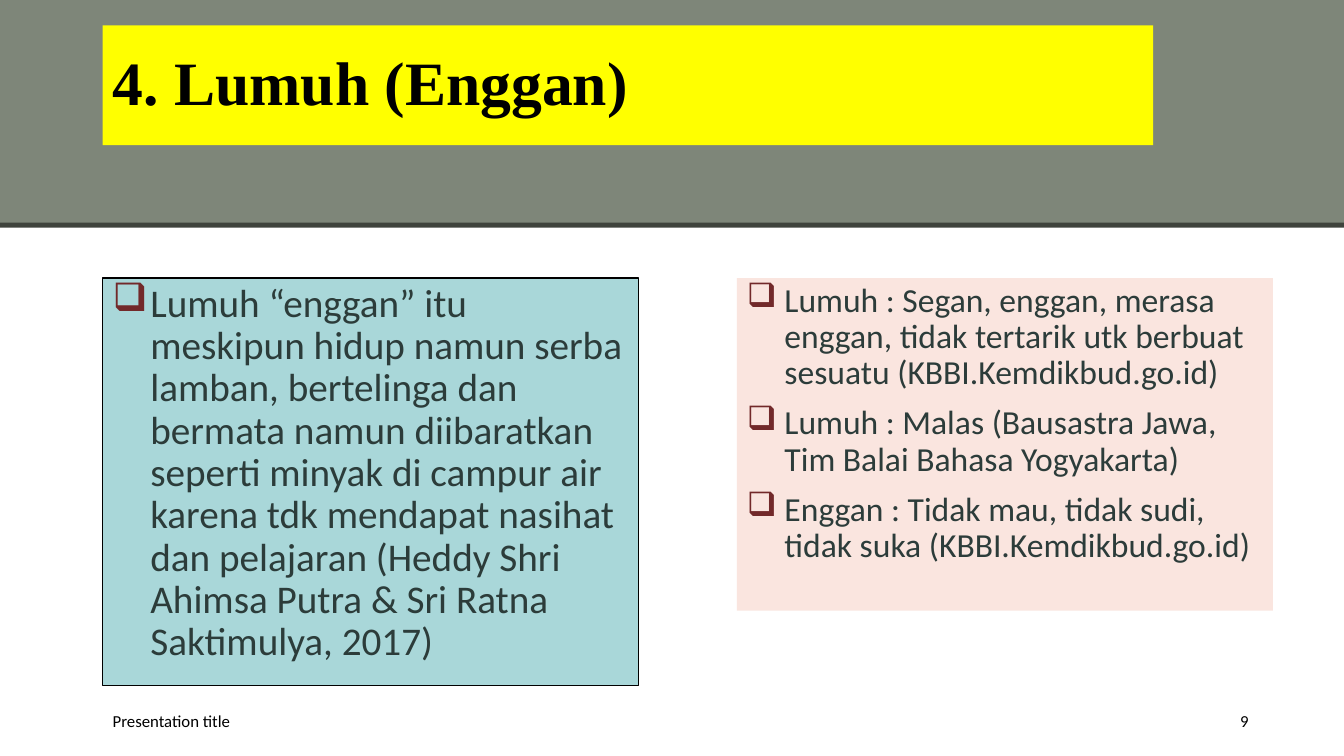
from lxml.etree import SubElement
from pptx import Presentation
from pptx.dml.color import RGBColor
from pptx.enum.shapes import MSO_SHAPE
from pptx.enum.text import MSO_ANCHOR, PP_ALIGN
from pptx.oxml.ns import qn
from pptx.util import Cm, Pt

# Content
TITLE = "4. Lumuh (Enggan)"
LEFT_POINTS = [
    "Lumuh “enggan” itu meskipun hidup namun serba lamban, bertelinga dan "
    "bermata namun diibaratkan seperti minyak di campur air karena tdk mendapat "
    "nasihat dan pelajaran (Heddy Shri Ahimsa Putra & Sri Ratna Saktimulya, 2017)",
]
RIGHT_POINTS = [
    "Lumuh : Segan, enggan, merasa enggan, tidak tertarik utk berbuat sesuatu "
    "(KBBI.Kemdikbud.go.id)",
    "Lumuh : Malas (Bausastra Jawa, Tim Balai Bahasa Yogyakarta)",
    "Enggan : Tidak mau, tidak sudi, tidak suka (KBBI.Kemdikbud.go.id)",
]
FOOTER = "Presentation title"
PAGE_NUMBER = "9"

# Layout in centimetres
SLIDE_WIDTH, SLIDE_HEIGHT = 33.87, 19.05
MARGIN = 2.59
PANEL_TOP, PANEL_WIDTH, PANEL_GAP = 7.01, 13.51, 2.47
RIGHT_PANEL = MARGIN + PANEL_WIDTH + PANEL_GAP
FOOTER_TOP, FOOTER_HEIGHT = 17.65, 1.02
INDENT = 0.95
INK, BULLET_COLOR = "2C3C3A", "72292A"


def color(value):
    return RGBColor.from_string(value)


def add_box(slide, left, top, width, height, fill, line=None):
    shape = slide.shapes.add_shape(
        MSO_SHAPE.RECTANGLE, Cm(left), Cm(top), Cm(width), Cm(height))
    shape.shadow.inherit = False
    shape.fill.solid()
    shape.fill.fore_color.rgb = color(fill)
    if line:
        shape.line.color.rgb = color(line)
        shape.line.width = Pt(1)
    else:
        shape.line.fill.background()
    return shape


def add_bullet(paragraph):
    properties = paragraph._p.get_or_add_pPr()
    properties.set("marL", str(Cm(INDENT)))
    properties.set("indent", str(-Cm(INDENT)))
    bullet_color = SubElement(properties, qn("a:buClr"))
    SubElement(bullet_color, qn("a:srgbClr"), val=BULLET_COLOR)
    SubElement(properties, qn("a:buChar"), char="❑")


def write(shape, lines, size, font="Calibri", ink="000000", bold=False, bullet=False,
          align=PP_ALIGN.LEFT, anchor=MSO_ANCHOR.MIDDLE, line_spacing=None):
    frame = shape.text_frame
    frame.word_wrap = True
    frame.vertical_anchor = anchor
    for index, line in enumerate(lines):
        paragraph = frame.add_paragraph() if index else frame.paragraphs[0]
        paragraph.alignment = align
        if line_spacing:
            paragraph.line_spacing = line_spacing
        if index:
            paragraph.space_before = Pt(10)
        if bullet:
            add_bullet(paragraph)
        run = paragraph.add_run()
        run.text = line
        run.font.name = font
        run.font.size = Pt(size)
        run.font.bold = bold
        run.font.color.rgb = color(ink)


def main():
    presentation = Presentation()
    presentation.slide_width = Cm(SLIDE_WIDTH)
    presentation.slide_height = Cm(SLIDE_HEIGHT)
    slide = presentation.slides.add_slide(presentation.slide_layouts[6])

    # Header band and title
    add_box(slide, 0, 0, SLIDE_WIDTH, 5.69, "7E8679")
    add_box(slide, 0, 5.61, SLIDE_WIDTH, 0.13, "3F433C")
    title = add_box(slide, MARGIN, 0.64, 26.47, 3.02, "FFFF00")
    write(title, [TITLE], 44, font="Times New Roman", bold=True, line_spacing=0.9)

    # Text panels
    panels = [
        (MARGIN, 10.26, "A9D7D9", "000000", LEFT_POINTS, 28),
        (RIGHT_PANEL, 8.38, "FAE5DF", None, RIGHT_POINTS, 24),
    ]
    for left, height, fill, line, points, size in panels:
        panel = add_box(slide, left, PANEL_TOP, PANEL_WIDTH, height, fill, line)
        write(panel, points, size, ink=INK, bullet=True,
              anchor=MSO_ANCHOR.TOP, line_spacing=0.9)

    # Footer
    footers = [
        (MARGIN, 11.43, FOOTER, PP_ALIGN.LEFT),
        (29.54, 2.18, PAGE_NUMBER, PP_ALIGN.RIGHT),
    ]
    for left, width, text, align in footers:
        box = slide.shapes.add_textbox(
            Cm(left), Cm(FOOTER_TOP), Cm(width), Cm(FOOTER_HEIGHT))
        write(box, [text], 12, align=align)

    presentation.save("out.pptx")


if __name__ == "__main__":
    main()
